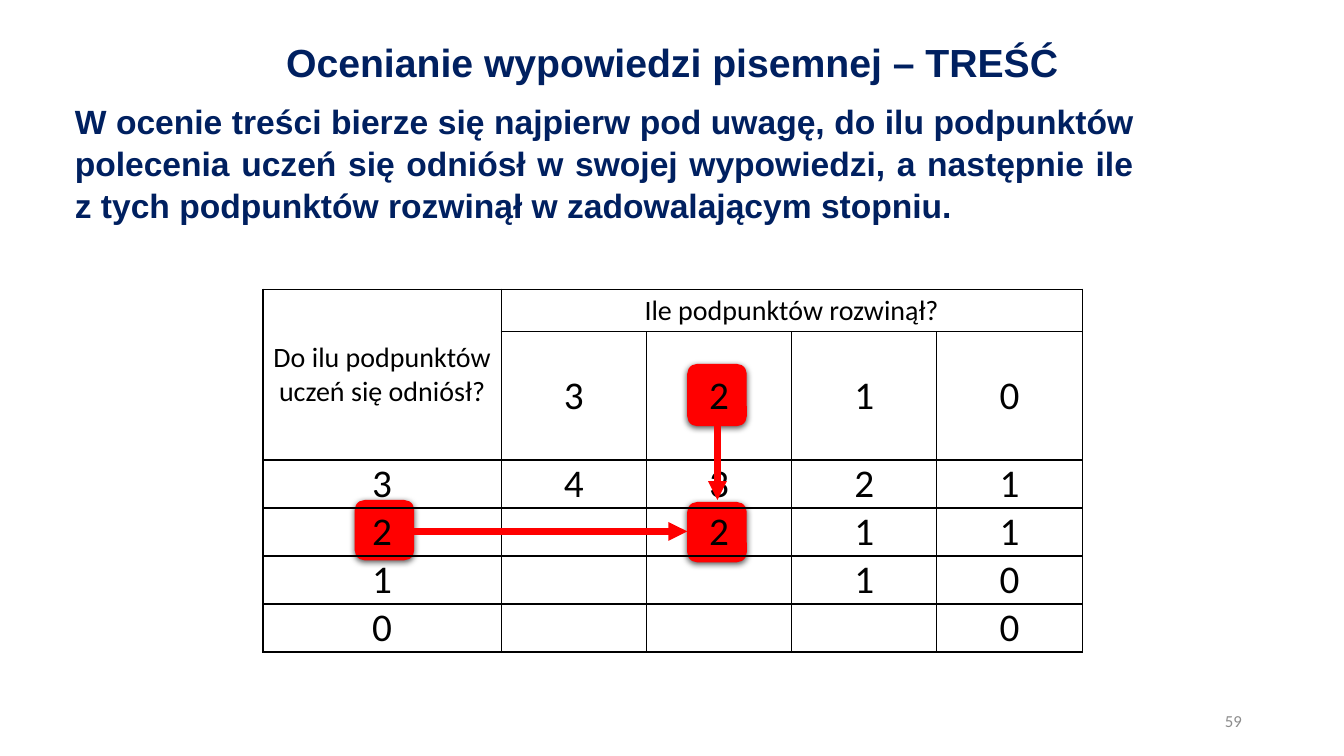
from dataclasses import dataclass

from lxml.etree import SubElement
from pptx import Presentation
from pptx.dml.color import RGBColor
from pptx.enum.shapes import MSO_CONNECTOR, MSO_SHAPE
from pptx.enum.text import MSO_ANCHOR, PP_ALIGN
from pptx.oxml import parse_xml
from pptx.oxml.ns import nsdecls, qn
from pptx.util import Cm, Pt


@dataclass(frozen=True)
class Theme:
    navy: str = "002060"
    red: str = "FF0000"
    black: str = "000000"
    grey: str = "8C8C8C"
    heading_font: str = "Arial"
    table_font: str = "Calibri"
    title_size: int = 28
    body_size: int = 24
    header_size: int = 20
    value_size: int = 28
    number_size: int = 12
    arrow_width: float = 4.5


def set_values(target, values):
    for name, value in values.items():
        setattr(target, name, value)


class SlideBuilder:
    def __init__(self, slide, theme):
        self.slide = slide
        self.theme = theme

    def add_text(self, frame, text, size, font, color, align, bold=False):
        frame.word_wrap = True
        paragraph = frame.paragraphs[0]
        paragraph.alignment = align
        run = paragraph.add_run()
        run.text = text
        set_values(run.font, {"size": Pt(size), "name": font, "bold": bold})
        run.font.color.rgb = RGBColor.from_string(color)
        return paragraph

    def place(self, shape, left, top, width, height):
        set_values(shape, {"left": Cm(left), "top": Cm(top),
                           "width": Cm(width), "height": Cm(height)})

    def title(self, text, *box):
        shape = self.slide.shapes.title
        self.place(shape, *box)
        shape.text_frame.vertical_anchor = MSO_ANCHOR.MIDDLE
        self.add_text(shape.text_frame, text, self.theme.title_size,
                      self.theme.heading_font, self.theme.navy, PP_ALIGN.CENTER, True)

    def body(self, text, *box):
        shape = self.slide.placeholders[1]
        self.place(shape, *box)
        shape.text_frame.vertical_anchor = MSO_ANCHOR.TOP
        paragraph = self.add_text(shape.text_frame, text, self.theme.body_size,
                                  self.theme.heading_font, self.theme.navy,
                                  PP_ALIGN.JUSTIFY, True)
        set_values(paragraph, {"space_before": Pt(0), "line_spacing": 1.05})
        properties = paragraph._p.get_or_add_pPr()
        properties.set("marL", "0")
        properties.set("indent", "0")
        SubElement(properties, qn("a:buNone"))

    def highlight(self, *box):
        shape = self.slide.shapes.add_shape(
            MSO_SHAPE.ROUNDED_RECTANGLE, *(Cm(length) for length in box))
        shape.fill.solid()
        shape.fill.fore_color.rgb = RGBColor.from_string(self.theme.red)
        shape.line.fill.background()
        shape._element.spPr.append(parse_xml(
            f'<a:effectLst {nsdecls("a")}>'
            '<a:outerShdw blurRad="57150" dist="19050" dir="5400000" rotWithShape="0">'
            f'<a:srgbClr val="{self.theme.black}"><a:alpha val="63000"/></a:srgbClr>'
            '</a:outerShdw></a:effectLst>'))

    def arrow(self, *points):
        connector = self.slide.shapes.add_connector(
            MSO_CONNECTOR.STRAIGHT, *(Cm(length) for length in points))
        connector.line.color.rgb = RGBColor.from_string(self.theme.red)
        connector.line.width = Pt(self.theme.arrow_width)
        properties = connector._element.spPr
        SubElement(properties.find(qn("a:ln")), qn("a:tailEnd"), type="triangle")
        SubElement(properties, qn("a:effectLst"))

    def cell(self, cell, text, size, anchor):
        set_values(cell, {"margin_left": Cm(0.18), "margin_right": Cm(0.18),
                          "margin_top": 0, "margin_bottom": 0,
                          "vertical_anchor": anchor})
        properties = cell._tc.get_or_add_tcPr()
        for side in "LRTB":
            properties.append(parse_xml(
                f'<a:ln{side} {nsdecls("a")} w="12700"><a:solidFill>'
                f'<a:srgbClr val="{self.theme.black}"/></a:solidFill></a:ln{side}>'))
        cell.fill.background()
        if text:
            self.add_text(cell.text_frame, text, size, self.theme.table_font,
                          self.theme.black, PP_ALIGN.CENTER)

    def score_table(self, rows, left, top, widths, heights):
        table = self.slide.shapes.add_table(
            len(heights), len(widths), Cm(left), Cm(top),
            Cm(sum(widths)), Cm(sum(heights))).table
        set_values(table, {"first_row": False, "horz_banding": False})
        for column, width in zip(table.columns, widths):
            column.width = Cm(width)
        for row, height in zip(table.rows, heights):
            row.height = Cm(height)
        table.cell(0, 0).merge(table.cell(1, 0))
        table.cell(0, 1).merge(table.cell(0, len(widths) - 1))
        for row_index, texts in enumerate(rows):
            size = self.theme.value_size if row_index else self.theme.header_size
            anchor = MSO_ANCHOR.TOP if row_index > 1 else MSO_ANCHOR.MIDDLE
            for column_index, text in enumerate(texts):
                self.cell(table.cell(row_index, column_index), text, size, anchor)

    def slide_number(self, text, *box):
        shape = self.slide.shapes.add_textbox(*(Cm(length) for length in box))
        shape.text_frame.vertical_anchor = MSO_ANCHOR.MIDDLE
        self.add_text(shape.text_frame, text, self.theme.number_size,
                      self.theme.table_font, self.theme.grey, PP_ALIGN.RIGHT)


SCORES = [
    ["Do ilu podpunktów uczeń się odniósł?", "Ile podpunktów rozwinął?", "", "", ""],
    ["", "3", "2", "1", "0"],
    ["3", "4", "3", "2", "1"],
    ["2", "", "2", "1", "1"],
    ["1", "", "", "1", "0"],
    ["0", "", "", "", "0"],
]


def main():
    presentation = Presentation()
    set_values(presentation, {"slide_width": Cm(33.87), "slide_height": Cm(19.05)})
    slide = presentation.slides.add_slide(presentation.slide_layouts[1])
    builder = SlideBuilder(slide, Theme())

    builder.title("Ocenianie wypowiedzi pisemnej – TREŚĆ", 4.39, 0.25, 25.1, 2.64)
    builder.body(
        "W ocenie treści bierze się najpierw pod uwagę, do ilu podpunktów "
        "polecenia uczeń się odniósł w swojej wypowiedzi, a następnie ile "
        "z tych podpunktów rozwinął w zadowalającym stopniu.",
        1.63, 2.36, 27.2, 3.33)
    for left, top, height in [(17.32, 12.65, 1.52), (17.32, 9.17, 1.57), (8.94, 12.6, 1.52)]:
        builder.highlight(left, top, 1.5, height)
    builder.score_table(SCORES, 6.63, 7.29, [6.0] + [3.66] * 4,
                        [1.07, 3.23] + [1.21] * 4)
    builder.arrow(18.08, 10.57, 18.08, 12.6)
    builder.arrow(10.44, 13.39, 17.32, 13.39)
    builder.slide_number("59", 23.93, 17.65, 7.62, 1.02)

    presentation.save("out.pptx")


if __name__ == "__main__":
    main()
